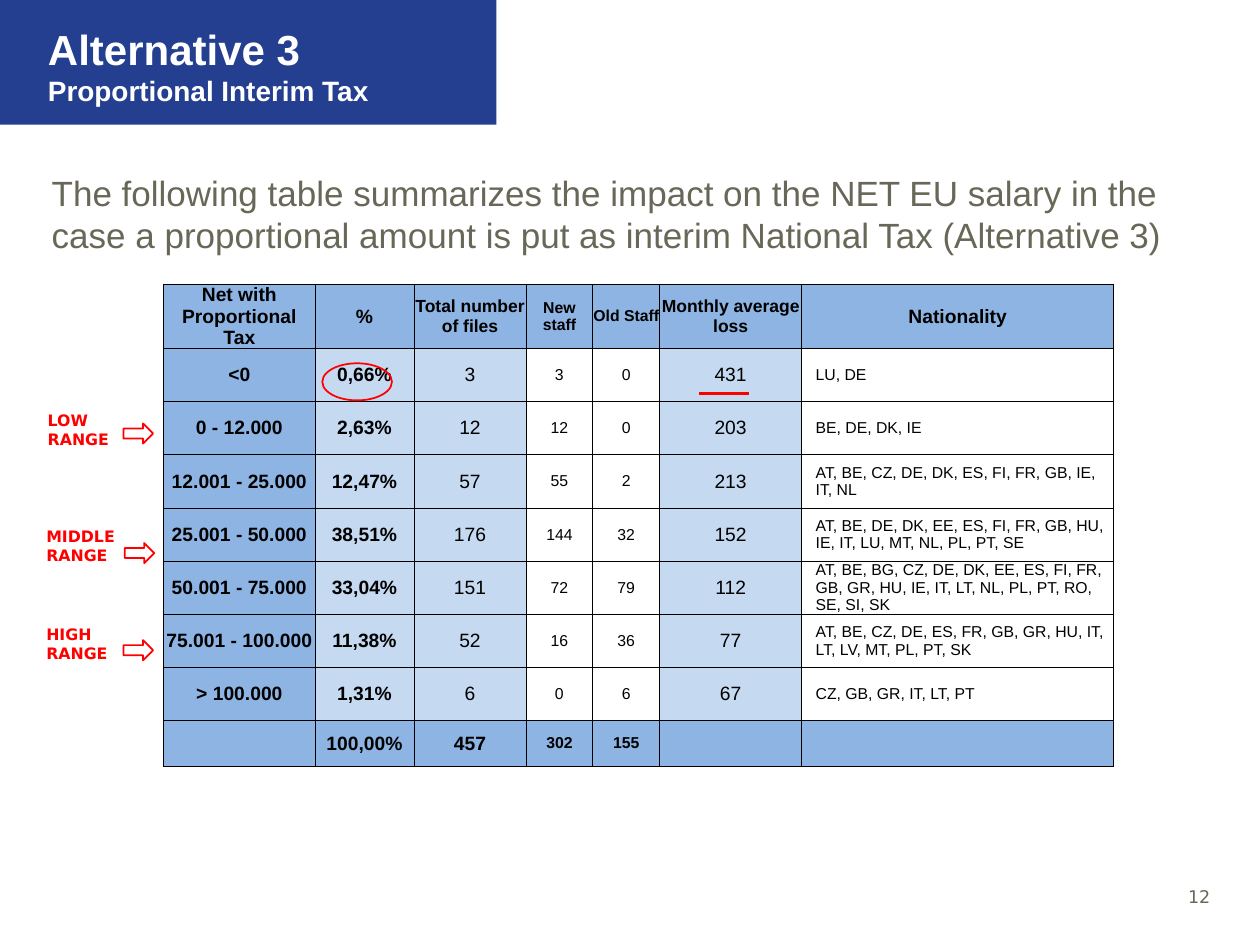
from lxml.etree import SubElement as Sub
from pptx import Presentation
from pptx.dml.color import RGBColor as Rgb
from pptx.enum.shapes import MSO_CONNECTOR as Conn, MSO_SHAPE as Kind
from pptx.enum.text import MSO_ANCHOR as Anchor, MSO_AUTO_SIZE as Fit, PP_ALIGN as Align
from pptx.oxml.ns import qn
from pptx.util import Pt

HUES = {"navy": "243E90", "white": "FFFFFF", "gray": "696757", "red": "FF0000",
        "black": "000000", "mid": "8DB4E2", "pale": "C5D9F1"}
COLS = [86.4, 56.6, 64, 38.2, 38.2, 81.2, 178.4]
ROWS = [34.6] + [30.4] * 7 + [25.8]
SIZES = [11, 11, 11, 9, 9, 11, 9]
HEADS = [11, 11, 10, 9, 9, 10, 11]
FILLS = ["mid", "pale", "pale", None, None, "pale", None]
DATA = [
    ["Net with Proportional Tax", "%", "Total number of files", "New staff",
     "Old Staff", "Monthly average loss", "Nationality"],
    ["<0", "0,66%", "3", "3", "0", "431", "LU, DE"],
    ["0 - 12.000", "2,63%", "12", "12", "0", "203", "BE, DE, DK, IE"],
    ["12.001 - 25.000", "12,47%", "57", "55", "2", "213",
     "AT, BE, CZ, DE, DK, ES, FI, FR, GB, IE, IT, NL"],
    ["25.001 - 50.000", "38,51%", "176", "144", "32", "152",
     "AT, BE, DE, DK, EE, ES, FI, FR, GB, HU, IE, IT, LU, MT, NL, PL, PT, SE"],
    ["50.001 - 75.000", "33,04%", "151", "72", "79", "112",
     "AT, BE, BG, CZ, DE, DK, EE, ES, FI, FR, GB, GR, HU, IE, IT, LT, NL, PL, PT, RO, SE, SI, SK"],
    ["75.001 - 100.000", "11,38%", "52", "16", "36", "77",
     "AT, BE, CZ, DE, ES, FR, GB, GR, HU, IT, LT, LV, MT, PL, PT, SK"],
    ["> 100.000", "1,31%", "6", "0", "6", "67", "CZ, GB, GR, IT, LT, PT"],
    ["", "100,00%", "457", "302", "155", "", ""],
]
LABELS = [("LOW RANGE", 20.2, 231, 70.6, 242),
          ("MIDDLE RANGE", 19.4, 297.4, 71.3, 310.3),
          ("HIGH RANGE", 19.4, 353.5, 70.6, 365.8)]


def hue(key):
    """Return the colour of a name."""
    return Rgb.from_string(HUES[key])


def write(para, text, size, key, bold=False, face="Arial"):
    """Add a formatted run to a paragraph."""
    run = para.add_run()
    run.text = text
    for name, value in {"size": Pt(size), "bold": bold, "name": face}.items():
        setattr(run.font, name, value)
    run.font.color.rgb = hue(key)


def place(shape, box):
    """Move a shape to a box and set its frame."""
    for name, value in zip(("left", "top", "width", "height"), box):
        setattr(shape, name, Pt(value))
    frame = shape.text_frame
    for name, value in {"word_wrap": True, "auto_size": Fit.NONE}.items():
        setattr(frame, name, value)
    return frame


def note(slide, box, *style):
    """Add a text box with one run."""
    frame = place(slide.shapes.add_textbox(0, 0, 0, 0), box)
    write(frame.paragraphs[0], *style)


def draw(slide, kind, box, fill=None, line=None):
    """Add a flat preset shape."""
    shape = slide.shapes.add_shape(kind, *map(Pt, box))
    shape.shadow.inherit = False
    if fill:
        shape.fill.solid()
        shape.fill.fore_color.rgb = hue(fill)
    else:
        shape.fill.background()
    if line:
        shape.line.color.rgb = hue(line)
        shape.line.width = Pt(1)
    else:
        shape.line.fill.background()
    return shape


def banner(slide, box):
    """Place the title on its blue block."""
    x, y, w, h = box
    block = draw(slide, Kind.RECTANGLE, box, "navy")
    slide.shapes._spTree.insert(2, block._element)
    frame = place(slide.shapes.title, (x + 20.2, y + 9.4, w - 26, h - 15.8))
    frame.vertical_anchor = Anchor.BOTTOM
    para = frame.paragraphs[0]
    para.alignment = Align.LEFT
    write(para, "Alternative 3", 24, "white", True)
    para.add_line_break()
    write(para, "Proportional Interim Tax", 16, "white", True)


def lead(slide, box):
    """Place the opening sentence in the body."""
    para = place(slide.placeholders[1], box).paragraphs[0]
    para.space_before = Pt(0)
    props = para._p.get_or_add_pPr()
    for name in ("marL", "indent"):
        props.set(name, "0")
    Sub(props, qn("a:buNone"))
    write(para, "The following table summarizes the impact on the NET EU salary in the "
          "case a proportional amount is put as interim National Tax (Alternative 3)", 20, "gray")


def edge(cell):
    """Give a cell thin black borders."""
    props = cell._tc.get_or_add_tcPr()
    for side in ("lnL", "lnR", "lnT", "lnB"):
        line = Sub(props, qn("a:" + side), w=str(Pt(0.5)))
        Sub(Sub(line, qn("a:solidFill")), qn("a:srgbClr"), val=HUES["black"])


def fill_cell(cell, text, row, col):
    """Format one table cell by its row and column."""
    head, total = row == 0, row == len(DATA) - 1
    listed = col == 6 and not head and not total
    edge(cell)
    for side in ("left", "right", "top", "bottom"):
        setattr(cell, "margin_" + side, Pt(0))
    cell.vertical_anchor = Anchor.MIDDLE
    key = "mid" if head or total else FILLS[col]
    if key:
        cell.fill.solid()
        cell.fill.fore_color.rgb = hue(key)
    else:
        cell.fill.background()
    if listed:
        cell.margin_left = Pt(8)
    para = cell.text_frame.paragraphs[0]
    para.alignment = Align.LEFT if listed else Align.CENTER
    if text:
        size = (HEADS if head else SIZES)[col]
        write(para, text, size, "black", head or total or col < 2)


def grid(slide, box):
    """Place the salary table with its red marks."""
    x, y = box[:2]
    table = slide.shapes.add_table(len(ROWS), len(COLS), *map(Pt, box)).table
    for name in ("first_row", "horz_banding"):
        setattr(table, name, False)
    for col, width in zip(table.columns, COLS):
        col.width = Pt(width)
    for row, height in zip(table.rows, ROWS):
        row.height = Pt(height)
    for row, texts in enumerate(DATA):
        for col, text in enumerate(texts):
            fill_cell(table.cell(row, col), text, row, col)
    draw(slide, Kind.OVAL, (x + 90.6, y + 45.2, 39.8, 21.2), line="red")
    ends = (x + 306, y + 62.4, x + 334.2, y + 62.4)
    rule = slide.shapes.add_connector(Conn.STRAIGHT, *map(Pt, ends))
    rule.line.color.rgb = hue("red")
    rule.line.width = Pt(1.5)
    Sub(rule._element.spPr, qn("a:effectLst"))


def ranges(slide, labels):
    """Place the range labels and their arrows."""
    for text, x, y, left, top in labels:
        note(slide, (x, y, 67.7, 28.8), text, 9, "red", True, "DejaVu Sans")
        draw(slide, Kind.RIGHT_ARROW, (left, top, 16.9, 11.5), line="red")


def main():
    """Build and save the slide."""
    deck = Presentation()
    deck.slide_width, deck.slide_height = Pt(720), Pt(540)
    slide = deck.slides.add_slide(deck.slide_layouts[1])
    banner(slide, (0, 0, 283.7, 71.3))
    lead(slide, (22.3, 94.3, 649.4, 55.4))
    grid(slide, (93.6, 162.4, sum(COLS), sum(ROWS)))
    ranges(slide, LABELS)
    note(slide, (671.8, 502.6, 28.1, 19.4), "12", 10, "gray", False, "DejaVu Sans")
    deck.save("out.pptx")


if __name__ == "__main__":
    main()
